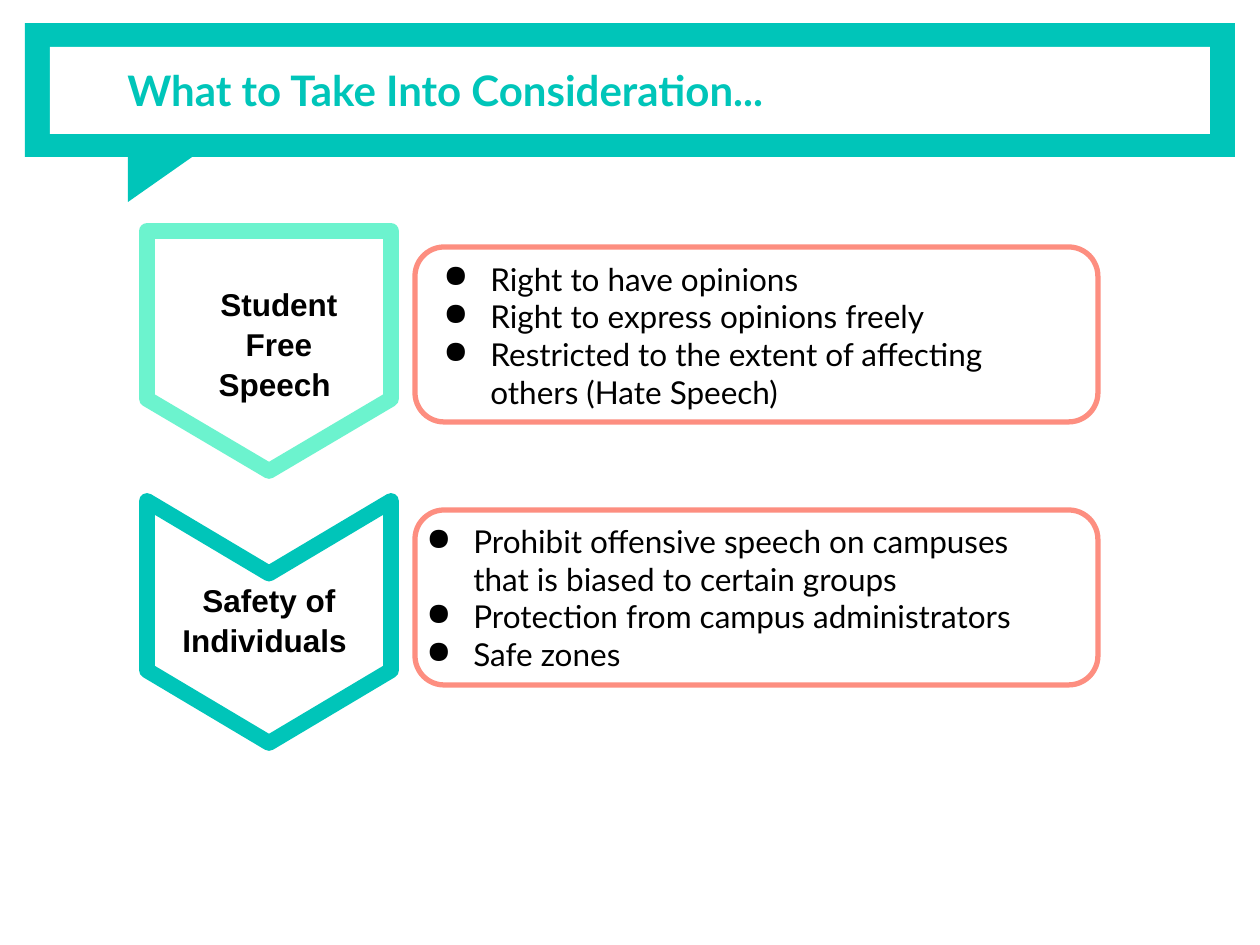
from lxml.etree import SubElement
from pptx import Presentation
from pptx.dml.color import RGBColor
from pptx.enum.shapes import MSO_SHAPE
from pptx.enum.text import MSO_ANCHOR, PP_ALIGN
from pptx.oxml.ns import qn
from pptx.util import Emu, Pt

PX = 914400 / 126
TEAL = RGBColor(0x00, 0xC5, 0xB9)
MINT = RGBColor(0x6C, 0xF3, 0xCE)
CORAL = RGBColor(0xFD, 0x8E, 0x80)
WHITE = RGBColor(0xFF, 0xFF, 0xFF)
BLACK = RGBColor(0, 0, 0)

TITLE_FONT = {"name": "Lato", "size": Pt(24), "bold": True}
LABEL_FONT = {"name": "Arial", "size": Pt(18), "bold": True}
BODY_FONT = {"name": "Lato", "size": Pt(18)}


def px(value):
    return Emu(round(value * PX))


def add_shape(slide, kind, box, fill=None, line=None, width=0, rotation=0, adjustment=None):
    shape = slide.shapes.add_shape(kind, *map(px, box))
    shape.shadow.inherit = False
    shape.rotation = rotation
    if adjustment is not None:
        shape.adjustments[0] = adjustment
    if fill is None:
        shape.fill.background()
    else:
        shape.fill.solid()
        shape.fill.fore_color.rgb = fill
    if line is None:
        shape.line.fill.background()
    else:
        shape.line.color.rgb = line
        shape.line.width = Pt(width)


def add_bullet(paragraph):
    properties = paragraph._p.get_or_add_pPr()
    properties.set("marL", str(px(63)))
    properties.set("indent", str(-px(47)))
    color = SubElement(properties, qn("a:buClr"))
    SubElement(color, qn("a:srgbClr")).set("val", str(BLACK))
    SubElement(properties, qn("a:buChar")).set("char", "●")


def add_text(slide, box, lines, font, color=BLACK, anchor=MSO_ANCHOR.TOP,
             bullets=False, **paragraph_format):
    frame = slide.shapes.add_textbox(*map(px, box)).text_frame
    frame_format = {"word_wrap": True, "vertical_anchor": anchor}
    frame_format |= {f"margin_{side}": Emu(91440) for side in ("left", "top", "right", "bottom")}
    for name, value in frame_format.items():
        setattr(frame, name, value)
    for index, line in enumerate(lines):
        paragraph = frame.add_paragraph() if index else frame.paragraphs[0]
        for name, value in paragraph_format.items():
            setattr(paragraph, name, value)
        if bullets:
            add_bullet(paragraph)
        run = paragraph.add_run()
        run.text = line
        for name, value in font.items():
            setattr(run.font, name, value)
        run.font.color.rgb = color


def add_banner(slide, title):
    add_shape(slide, MSO_SHAPE.RECTANGLE, (25, 23, 1210, 134), fill=TEAL)
    add_shape(slide, MSO_SHAPE.RIGHT_TRIANGLE, (141, 128, 61, 87), fill=TEAL, rotation=90)
    add_shape(slide, MSO_SHAPE.RECTANGLE, (50, 47, 1160, 87), fill=WHITE)
    add_text(slide, (115, 23, 1096, 134), [title], TITLE_FONT, TEAL, MSO_ANCHOR.MIDDLE)


def add_arrow(slide, kind, box, color):
    add_shape(slide, kind, box, line=color, width=9, rotation=90, adjustment=0.3)


def add_label(slide, box, text):
    add_text(slide, box, [text], LABEL_FONT, alignment=PP_ALIGN.CENTER, line_spacing=1.05)


def add_card(slide, top):
    add_shape(slide, MSO_SHAPE.ROUNDED_RECTANGLE, (415, top, 683, 175),
              line=CORAL, width=3, adjustment=0.167)


def main():
    presentation = Presentation()
    presentation.slide_width, presentation.slide_height = px(1260), px(945)
    slide = presentation.slides.add_slide(presentation.slide_layouts[6])

    # Title banner with speech tail
    add_banner(slide, "What to Take Into Consideration...")

    # Downward arrows and their labels
    add_arrow(slide, MSO_SHAPE.PENTAGON, (149, 229, 240, 244), MINT)
    add_arrow(slide, MSO_SHAPE.CHEVRON, (148, 500, 242, 244), TEAL)
    add_label(slide, (179, 271, 200, 117), "Student Free Speech ")
    add_label(slide, (169, 567, 200, 117), "Safety of Individuals ")

    # Bullet lists
    add_text(slide, (415, 247, 650, 142), [
        "Right to have opinions",
        "Right to express opinions freely",
        "Restricted to the extent of affecting others (Hate Speech)",
    ], BODY_FONT, bullets=True)
    add_text(slide, (398, 510, 683, 175), [
        "Prohibit offensive speech on campuses that is biased to certain groups",
        "Protection from campus administrators",
        "Safe zones",
    ], BODY_FONT, anchor=MSO_ANCHOR.MIDDLE, bullets=True)

    # Rounded outlines around the lists
    for top in (510, 247):
        add_card(slide, top)

    presentation.save("out.pptx")


if __name__ == "__main__":
    main()
